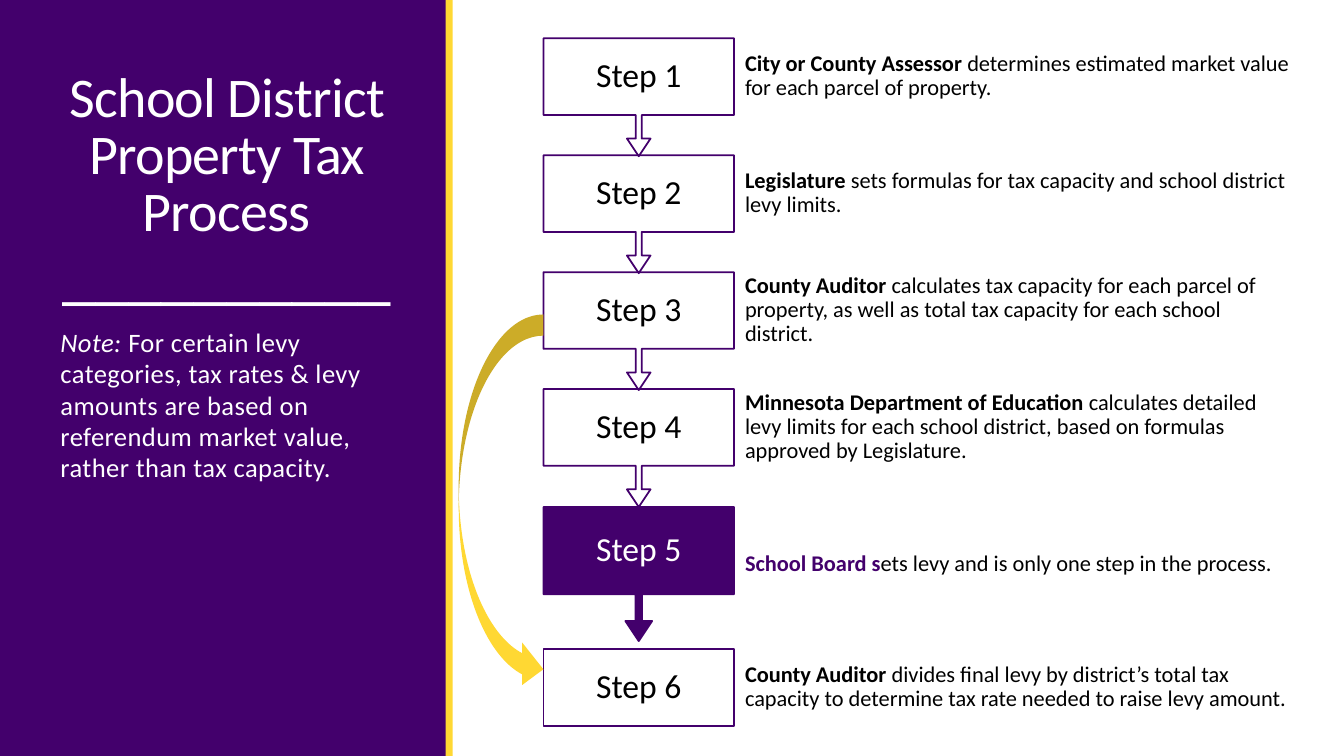
from dataclasses import dataclass

from lxml.etree import SubElement
from pptx import Presentation
from pptx.dml.color import RGBColor
from pptx.enum.shapes import MSO_SHAPE
from pptx.enum.text import MSO_ANCHOR, MSO_AUTO_SIZE, PP_ALIGN
from pptx.oxml.ns import qn
from pptx.shapes.autoshape import Shape
from pptx.slide import Slide
from pptx.text.text import TextFrame, _Paragraph, _Run
from pptx.util import Inches, Pt


@dataclass(frozen=True)
class Theme:
    font: str = "Calibri"
    purple: RGBColor = RGBColor(0x43, 0x00, 0x6C)
    yellow: RGBColor = RGBColor(0xFF, 0xD8, 0x33)
    white: RGBColor = RGBColor(0xFF, 0xFF, 0xFF)
    black: RGBColor = RGBColor(0x00, 0x00, 0x00)
    title: float = 40
    rule: float = 48
    note: float = 19
    step: float = 24
    detail: float = 16
    outline: float = 1.25


@dataclass(frozen=True)
class Area:
    left: float
    top: float
    width: float
    height: float

    def lengths(self) -> tuple[int, int, int, int]:
        return (Inches(self.left), Inches(self.top),
                Inches(self.width), Inches(self.height))


@dataclass(frozen=True)
class Step:
    actor: str
    action: str
    top: float
    box_height: float = 0.76
    callout_height: float = 1.17
    detail_height: float = 0.76
    highlighted: bool = False


THEME = Theme()
STEP_LEFT, STEP_WIDTH = 5.39, 1.89
DETAIL_LEFT, DETAIL_WIDTH = 7.28, 5.66
FIRST_TOP, PITCH = 0.38, 1.16
CALLOUT_ADJUSTMENTS = (0.05, 0.1, 0.15, 0.65)

STEPS = [
    Step("City or County Assessor ",
         "determines estimated market value for each parcel of property.",
         FIRST_TOP),
    Step("Legislature ",
         "sets formulas for tax capacity and school district levy limits.",
         FIRST_TOP + PITCH),
    Step("County Auditor ",
         "calculates tax capacity for each parcel of property, as well as "
         "total tax capacity for each school district.",
         FIRST_TOP + 2 * PITCH),
    Step("Minnesota Department of Education ",
         "calculates detailed levy limits for each school district, based on "
         "formulas approved by Legislature.",
         FIRST_TOP + 3 * PITCH),
    Step("School Board s", "ets levy and is only one step in the process.",
         5.03, box_height=0.87, callout_height=1.33, detail_height=1.13,
         highlighted=True),
    Step("County Auditor ",
         "divides final levy by district’s total tax capacity to determine "
         "tax rate needed to raise levy amount.",
         6.44),
]


def add_span(para: _Paragraph, text: str, size: float, color: RGBColor,
             bold: bool = False, italic: bool = False,
             spacing: float = 0) -> _Run:
    span = para.add_run()
    span.text = text
    span.font.name = THEME.font
    span.font.size = Pt(size)
    span.font.color.rgb = color
    span.font.bold = bold
    span.font.italic = italic
    if spacing:
        span._r.get_or_add_rPr().set("spc", str(round(spacing * 100)))
    return span


def add_figure(page: Slide, kind: MSO_SHAPE, area: Area,
               fill: RGBColor | None = None,
               line: RGBColor | None = None) -> Shape:
    figure = page.shapes.add_shape(kind, *area.lengths())
    figure.shadow.inherit = False
    if fill is None:
        figure.fill.background()
    else:
        figure.fill.solid()
        figure.fill.fore_color.rgb = fill
    if line is None:
        figure.line.fill.background()
    else:
        figure.line.color.rgb = line
        figure.line.width = Pt(THEME.outline)
    return figure


def set_frame(frame: TextFrame, anchor: MSO_ANCHOR, side: float,
              vertical: float) -> None:
    frame.word_wrap = True
    frame.auto_size = MSO_AUTO_SIZE.NONE
    frame.vertical_anchor = anchor
    frame.margin_left = frame.margin_right = Inches(side)
    frame.margin_top = frame.margin_bottom = Inches(vertical)


def add_text(page: Slide, area: Area, side: float, vertical: float,
             align: PP_ALIGN) -> _Paragraph:
    box = page.shapes.add_textbox(*area.lengths())
    set_frame(box.text_frame, MSO_ANCHOR.MIDDLE, side, vertical)
    para = box.text_frame.paragraphs[0]
    para.alignment = align
    para.line_spacing = 0.9
    return para


def add_step(page: Slide, number: int, step: Step, last: bool) -> None:
    # Box, with a downward arrow on all but the last step
    fill = THEME.purple if step.highlighted else None
    label_area = Area(STEP_LEFT, step.top, STEP_WIDTH, step.box_height)
    if last:
        add_figure(page, MSO_SHAPE.RECTANGLE, label_area, fill, THEME.purple)
    else:
        area = Area(STEP_LEFT, step.top, STEP_WIDTH, step.callout_height)
        callout = add_figure(page, MSO_SHAPE.UP_ARROW_CALLOUT, area, fill,
                             THEME.purple)
        callout.rotation = 180
        for index, value in enumerate(CALLOUT_ADJUSTMENTS):
            callout.adjustments[index] = value

    # Step label
    label = add_text(page, label_area, 0.13, 0.19, PP_ALIGN.CENTER)
    add_span(label, f"Step {number}", THEME.step,
             THEME.white if step.highlighted else THEME.black)

    # Description
    detail_area = Area(DETAIL_LEFT, step.top, DETAIL_WIDTH, step.detail_height)
    detail = add_text(page, detail_area, 0.11, 0.22, PP_ALIGN.LEFT)
    add_span(detail, step.actor, THEME.detail,
             THEME.purple if step.highlighted else THEME.black, bold=True)
    add_span(detail, step.action, THEME.detail, THEME.black)


def place_placeholder(box: Shape, area: Area) -> None:
    box.left, box.top, box.width, box.height = area.lengths()
    box.element.getparent().append(box.element)  # bring in front of the panel


def fill_title(title: Shape) -> None:
    place_placeholder(title, Area(0.5, 0.65, 3.5, 2.5))
    set_frame(title.text_frame, MSO_ANCHOR.MIDDLE, 0.1, 0.05)
    para = title.text_frame.paragraphs[0]
    para.alignment = PP_ALIGN.CENTER
    para.line_spacing = 0.85
    add_span(para, "School District Property Tax Process", THEME.title,
             THEME.white, spacing=-0.5)
    para.add_line_break()
    add_span(para, "__________", THEME.rule, THEME.white, spacing=-0.5)


def fill_note(note: Shape) -> None:
    place_placeholder(note, Area(0.5, 3.2, 3.5, 3.7))
    set_frame(note.text_frame, MSO_ANCHOR.TOP, 0, 0.05)
    para = note.text_frame.paragraphs[0]
    para.alignment = PP_ALIGN.LEFT
    para.line_spacing = 0.98
    para.space_before = para.space_after = Pt(6)
    properties = para._p.get_or_add_pPr()
    properties.set("marL", str(Inches(0.1)))
    properties.set("indent", "0")
    SubElement(properties, qn("a:buNone"))
    add_span(para, "Note: ", THEME.note, THEME.white, italic=True, spacing=0.3)
    add_span(para, "For certain levy categories, tax rates & levy amounts are "
             "based on referendum market value, rather than tax capacity.",
             THEME.note, THEME.white, spacing=0.3)


def main() -> None:
    deck = Presentation()
    deck.slide_width, deck.slide_height = Inches(13.33), Inches(7.5)
    page = deck.slides.add_slide(deck.slide_layouts[1])

    # Side panel
    add_figure(page, MSO_SHAPE.RECTANGLE, Area(0, 0, 4.43, 7.5), THEME.purple)
    add_figure(page, MSO_SHAPE.RECTANGLE, Area(4.42, 0, 0.07, 7.5), THEME.yellow)
    fill_title(page.shapes.title)
    fill_note(page.placeholders[1])

    # Process steps
    for number, step in enumerate(STEPS, start=1):
        add_step(page, number, step, last=number == len(STEPS))

    # Curved arrow from step 3 to step 6
    bypass = add_figure(page, MSO_SHAPE.CURVED_LEFT_ARROW,
                        Area(4.55, 3.12, 0.84, 3.73), THEME.yellow)
    bypass.element.spPr.find(qn("a:xfrm")).set("flipH", "1")

    deck.save("out.pptx")


if __name__ == "__main__":
    main()
